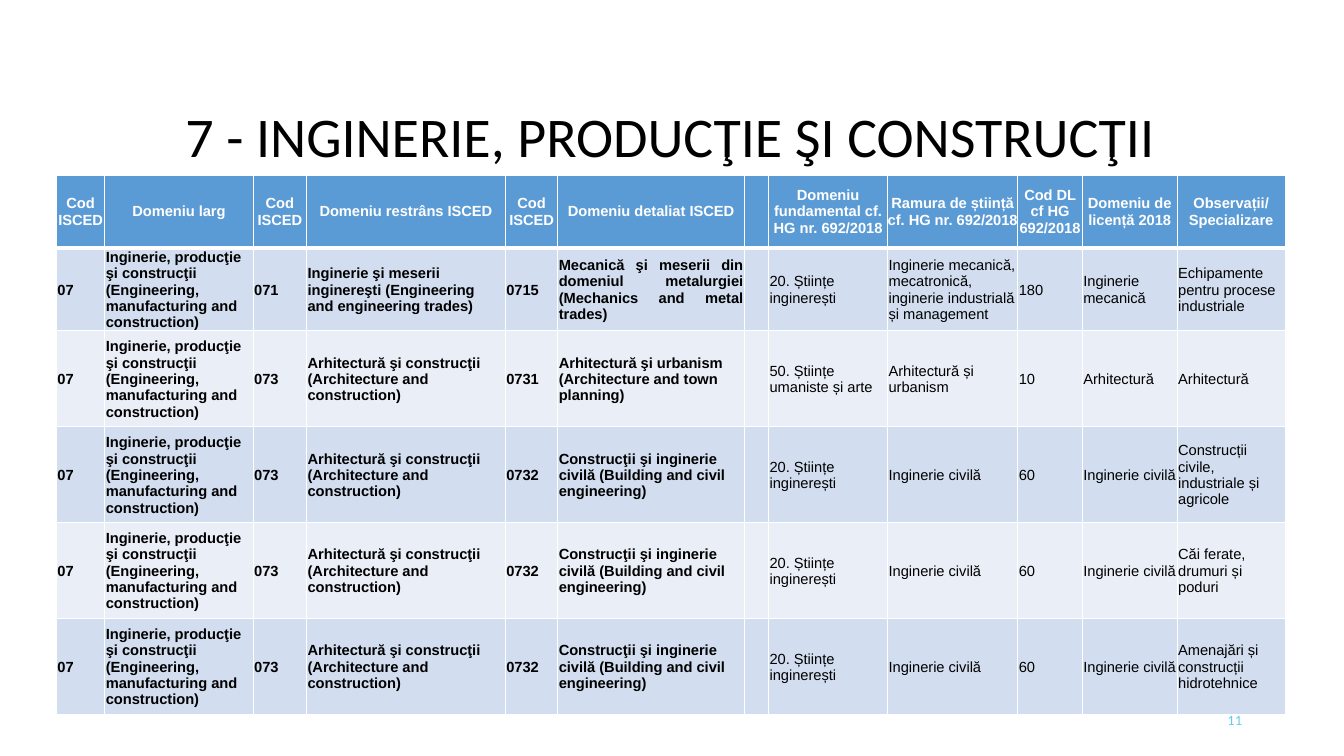
from dataclasses import dataclass
from lxml.etree import SubElement
from pptx import Presentation
from pptx.dml.color import RGBColor
from pptx.enum.text import MSO_ANCHOR, MSO_AUTO_SIZE, PP_ALIGN
from pptx.oxml.ns import qn
from pptx.util import Inches, Pt


@dataclass(frozen=True)
class Theme:
    text: str = "000000"
    white: str = "FFFFFF"
    header: str = "5B9BD5"
    bands: tuple = ("D2DEEF", "EAEFF7")
    page: str = "5FCBEF"
    title_font: str = "Calibri"
    table_font: str = "Arial"
    page_font: str = "Lato"
    title_size: float = 40
    table_size: float = 10.5
    page_size: float = 9
    thin_border: float = 1
    thick_border: float = 3


THEME = Theme()
COLUMN_WIDTHS = (0.48, 1.47, 0.53, 1.97, 0.52, 1.85, 0.22, 1.18, 1.29, 0.64, 0.94, 1.07)
ROW_HEIGHTS = (0.72, 0.82, 0.95, 0.95, 0.95, 0.95)
GAP_COLUMN = 6
JUSTIFIED_CELL = (1, 5)

HEADERS = (
    "Cod ISCED", "Domeniu larg", "Cod ISCED", "Domeniu restrâns ISCED",
    "Cod ISCED", "Domeniu detaliat ISCED", "",
    "Domeniu fundamental cf. HG nr. 692/2018", "Ramura de știință cf. HG nr. 692/2018",
    "Cod DL cf HG 692/2018", "Domeniu de licență 2018", "Observații/ Specializare",
)
BROAD_FIELD = (
    "07",
    "Inginerie, producţie şi construcţii (Engineering, manufacturing and construction)",
)
ARCHITECTURE_FIELD = (
    *BROAD_FIELD, "073", "Arhitectură şi construcţii (Architecture and construction)",
)
CIVIL_ENGINEERING = (
    *ARCHITECTURE_FIELD,
    "0732", "Construcţii şi inginerie civilă (Building and civil engineering)", "",
    "20. Științe inginerești", "Inginerie civilă", "60", "Inginerie civilă",
)
ROWS = (
    HEADERS,
    (
        *BROAD_FIELD,
        "071", "Inginerie şi meserii inginereşti (Engineering and engineering trades)",
        "0715", "Mecanică şi meserii din domeniul metalurgiei (Mechanics and metal trades)", "",
        "20. Științe inginerești",
        "Inginerie mecanică, mecatronică, inginerie industrială și management",
        "180", "Inginerie mecanică", "Echipamente pentru procese industriale",
    ),
    (
        *ARCHITECTURE_FIELD,
        "0731", "Arhitectură şi urbanism (Architecture and town planning)", "",
        "50. Științe umaniste și arte", "Arhitectură și urbanism",
        "10", "Arhitectură", "Arhitectură",
    ),
    (*CIVIL_ENGINEERING, "Construcții civile, industriale și agricole"),
    (*CIVIL_ENGINEERING, "Căi ferate, drumuri și poduri"),
    (*CIVIL_ENGINEERING, "Amenajări și construcții hidrotehnice"),
)


def add_text(paragraph, text, font_name, size, color, bold=False):
    run = paragraph.add_run()
    run.text = text
    run.font.name = font_name
    run.font.size = Pt(size)
    run.font.bold = bold
    run.font.color.rgb = RGBColor.from_string(color)


def set_borders(cell, top, bottom):
    properties = cell._tc.get_or_add_tcPr()
    widths = {"L": THEME.thin_border, "R": THEME.thin_border, "T": top, "B": bottom}
    for side, width in widths.items():
        line = SubElement(properties, qn(f"a:ln{side}"), w=str(Pt(width)))
        fill = SubElement(line, qn("a:solidFill"))
        SubElement(fill, qn("a:srgbClr"), val=THEME.white)


def add_title(slide, box, text):
    title = slide.shapes.title
    title.left, title.top, title.width, title.height = map(Inches, box)
    frame = title.text_frame
    frame.auto_size = MSO_AUTO_SIZE.NONE
    frame.word_wrap = True
    frame.vertical_anchor = MSO_ANCHOR.MIDDLE
    paragraph = frame.paragraphs[0]
    paragraph.alignment = PP_ALIGN.CENTER
    paragraph.line_spacing = 0.9
    add_text(paragraph, text, THEME.title_font, THEME.title_size, THEME.text)


def fill_cell(cell, row_index, column_index, text):
    is_header = row_index == 0
    set_borders(
        cell,
        THEME.thick_border if row_index == 1 else THEME.thin_border,
        THEME.thick_border if is_header else THEME.thin_border,
    )
    cell.fill.solid()
    background = THEME.header if is_header else THEME.bands[(row_index - 1) % 2]
    cell.fill.fore_color.rgb = RGBColor.from_string(background)
    if not text:
        return
    inset = Inches(0 if is_header else 0.01)
    cell.margin_left = cell.margin_right = cell.margin_top = inset
    cell.margin_bottom = 0
    cell.vertical_anchor = MSO_ANCHOR.MIDDLE
    paragraph = cell.text_frame.paragraphs[0]
    if is_header:
        paragraph.alignment = PP_ALIGN.CENTER
    elif (row_index, column_index) == JUSTIFIED_CELL:
        paragraph.alignment = PP_ALIGN.JUSTIFY
    else:
        paragraph.alignment = PP_ALIGN.LEFT
    color = THEME.white if is_header else THEME.text
    bold = is_header or column_index < GAP_COLUMN
    add_text(paragraph, text, THEME.table_font, THEME.table_size, color, bold)


def add_field_table(slide, box):
    left, top, width, height = map(Inches, box)
    table = slide.shapes.add_table(
        len(ROWS), len(HEADERS), left, top, width, height
    ).table
    for column, share in zip(table.columns, COLUMN_WIDTHS):
        column.width = int(width * share / sum(COLUMN_WIDTHS))
    for row, share in zip(table.rows, ROW_HEIGHTS):
        row.height = int(height * share / sum(ROW_HEIGHTS))
    for row_index, texts in enumerate(ROWS):
        for column_index, text in enumerate(texts):
            fill_cell(table.cell(row_index, column_index), row_index, column_index, text)


def add_page_number(slide, box, number):
    frame = slide.shapes.add_textbox(*map(Inches, box)).text_frame
    frame.word_wrap = True
    frame.vertical_anchor = MSO_ANCHOR.MIDDLE
    paragraph = frame.paragraphs[0]
    paragraph.alignment = PP_ALIGN.RIGHT
    add_text(paragraph, number, THEME.page_font, THEME.page_size, THEME.page)


def main():
    presentation = Presentation()
    presentation.slide_width = Inches(13.33)
    presentation.slide_height = Inches(7.5)
    slide = presentation.slides.add_slide(presentation.slide_layouts[5])
    add_title(slide, (0.69, 1.02, 11.91, 0.72), "7 - INGINERIE, PRODUCŢIE ŞI CONSTRUCŢII")
    add_field_table(slide, (0.56, 1.74, 12.17, 5.35))
    add_page_number(slide, (9.42, 6.95, 3, 0.4), "11")
    presentation.save("out.pptx")


if __name__ == "__main__":
    main()
